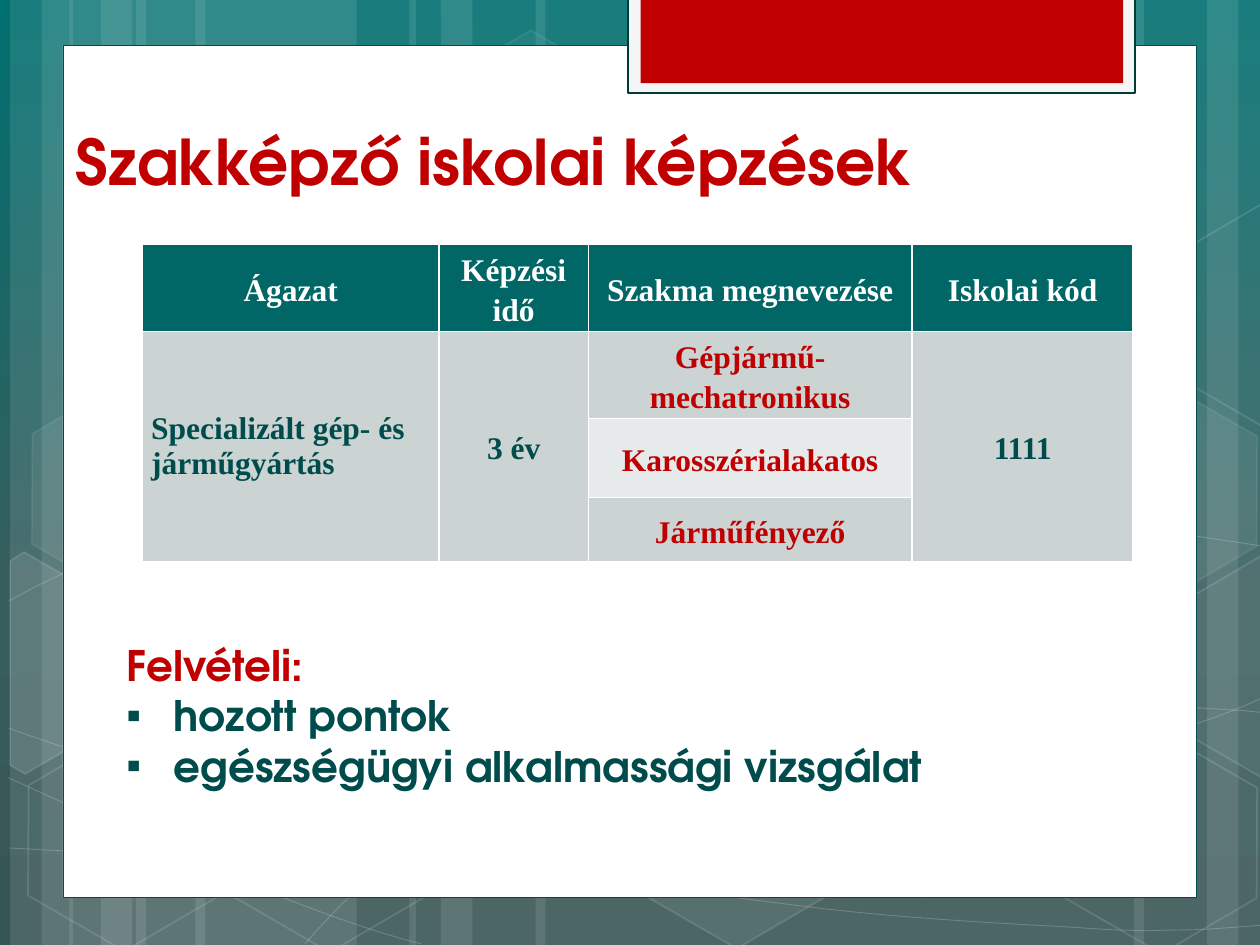
from copy import deepcopy
from math import cos, radians, sin
from typing import NamedTuple, Optional

from lxml.etree import SubElement
from pptx import Presentation
from pptx.dml.color import RGBColor
from pptx.enum.shapes import MSO_SHAPE as Preset
from pptx.enum.text import MSO_ANCHOR as Anchor, MSO_AUTO_SIZE as AutoSize, PP_ALIGN as Align
from pptx.oxml.ns import qn
from pptx.util import Emu, Inches, Pt

WHITE = RGBColor(0xFF, 0xFF, 0xFF)
RED = RGBColor(0xC0, 0x00, 0x00)
DARK_TEAL = RGBColor(0x00, 0x4C, 0x4C)
FRAME_TEAL = RGBColor(0x00, 0x3B, 0x3C)
HEADER_TEAL = RGBColor(0x00, 0x66, 0x66)
PALE_GREY = RGBColor(0xF5, 0xF5, 0xF5)
CELL_GREY = RGBColor(0xCC, 0xD3, 0xD3)
LIGHT_GREY = RGBColor(0xE7, 0xEA, 0xEA)
BACKDROP = [(0, RGBColor(0x00, 0x6F, 0x6F)), (0.62, RGBColor(0x37, 0x5D, 0x5D)),
            (1, RGBColor(0x38, 0x55, 0x55))]
HEADING_FONT, TABLE_FONT = "TeX Gyre Adventor", "Times New Roman"
TILT = 30

# The slide is a grid of 100 columns by 75 square rows
deck = Presentation()
deck.slide_width, deck.slide_height = Inches(10), Inches(7.5)
UNIT = deck.slide_width / 100


def units(count: float) -> Emu:
    return Emu(round(count * UNIT))


class Area(NamedTuple):
    left: float
    top: float
    width: float
    height: float

    def lengths(self) -> list[Emu]:
        return [units(value) for value in self]


class Paint(NamedTuple):
    fill: Optional[RGBColor] = None
    fill_alpha: int = 100
    line: Optional[RGBColor] = None
    line_width: float = 1
    line_alpha: int = 100


class Hexagon(NamedTuple):
    left: float
    top: float
    fill_alpha: int
    line_alpha: int


class CutHexagon(NamedTuple):
    center: tuple
    corners: list
    fill_alpha: int


class Entry(NamedTuple):
    text: str
    fill: RGBColor
    color: RGBColor
    centred: bool = True


STRIPES = [(10.8, 17.5), (0.8, 5), (3.3, 8.3), (15.5, 17.5), (5.5, 5), (8, 8.3), (73.3, 17.5),
           (95.8, 5), (90, 8.3), (42.5, 30.8), (32.5, 5), (35, 8.3)]

# Each curve: its start, then segments of three Bézier points or one line point
CURVES = [
    [[(0.7, 67.3)], [(6.1, 67.6), (11.5, 67.9), (19, 67.8)], [(26.5, 67.7), (35.8, 67.5), (45.8, 66.5)],
     [(55.8, 65.5), (70, 63.6), (79.2, 61.7)], [(88.3, 59.8), (97.7, 56.8), (100.7, 55.1)]],
    [[(0.7, 47.7)], [(3.6, 46.1), (6.5, 44.6), (12.1, 43.1)], [(17.8, 41.6), (25.9, 39.4), (34.7, 38.7)],
     [(43.6, 38), (54.4, 37.9), (65.4, 38.7)], [(76.4, 39.5), (94.7, 42.6), (100.7, 43.4)]],
    [[(0.6, 61.7)], [(12.7, 67.2), (24.7, 72.7), (33.4, 74.9)]],
    [[(0.7, 57.8)], [(3.8, 58.9), (7, 60), (12.8, 61.6)], [(18.6, 63.1), (27.3, 65.6), (35.7, 67.3)],
     [(44, 69), (54.5, 70.8), (62.8, 71.8)], [(71.1, 72.9), (80, 73.3), (85.3, 73.6)],
     [(90.5, 74), (91.9, 73.8), (94.5, 73.8)], [(97.1, 73.7), (98.9, 73.5), (100.7, 73.4)]],
    [[(24.2, 74.9)], [(26, 72.9), (27.8, 70.9), (30.2, 69.1)], [(32.6, 67.3), (36, 65.3), (38.8, 63.9)],
     [(41.6, 62.5), (43.3, 61.9), (47, 60.9)], [(50.6, 59.9), (57.3, 58.5), (60.8, 57.8)],
     [(64.4, 57.1), (64.9, 57.1), (68, 56.9)], [(71.1, 56.6), (76, 56.3), (79.4, 56.2)],
     [(82.9, 56.1), (88.6, 56.2), (88.6, 56.2)], [(95.3, 56.2)],
     [(97.1, 56.3), (98.8, 56.4), (99.7, 56.5)], [(100.6, 56.6), (100.3, 56.5), (100.6, 56.6)]],
]
HEXAGONS = [Hexagon(33.4, 3.6, 4, 8), Hexagon(49.7, 58.9, 6, 12), Hexagon(1.1, 59.1, 0, 12),
            Hexagon(1.4, 31.2, 7, 8), Hexagon(17.4, 59.2, 0, 12), Hexagon(75.3, 45.3, 10, 12),
            Hexagon(83.4, 59.3, 0, 12), Hexagon(83.4, 31.4, 7, 8)]

# Hexagons cut by the slide's edge; the right-hand pair shares one outline
LEFT_CUT = [(0.8, 44.5), (1.9, 43.8), (9.6, 48.2), (9.5, 57), (2, 61.4), (0.8, 60.7)]
RIGHT_CUT = [(92.6, 48.5), (100.1, 44.1), (100.9, 44.6), (100.9, 61.3), (100.2, 61.7), (92.6, 57.3)]
UPPER_CUT = [(x, y - 27.9) for x, y in RIGHT_CUT]
CUT_HEXAGONS = [CutHexagon((3.6, 53.5), LEFT_CUT, 10), CutHexagon((98.5, 52), RIGHT_CUT, 4),
                CutHexagon((98.5, 24.1), UPPER_CUT, 0)]

COLUMN_WIDTHS = [23.55, 11.85, 25.7, 17.55]
ROW_HEIGHTS = [6.3, 6.5, 6.3, 5.1]
HEADINGS = ["Ágazat", "Képzési idő", "Szakma megnevezése", "Iskolai kód"]
ENTRIES = {(0, column): Entry(text, HEADER_TEAL, WHITE) for column, text in enumerate(HEADINGS)} | {
    (1, 0): Entry("Specializált gép- és járműgyártás", CELL_GREY, DARK_TEAL, centred=False),
    (1, 1): Entry("3 év", CELL_GREY, DARK_TEAL),
    (1, 2): Entry("Gépjármű-mechatronikus", CELL_GREY, RED),
    (1, 3): Entry("1111", CELL_GREY, DARK_TEAL),
    (2, 2): Entry("Karosszérialakatos", LIGHT_GREY, RED),
    (3, 2): Entry("Járműfényező", CELL_GREY, RED),
}


def apply_paint(shape, paint: Paint) -> None:
    shape.shadow.inherit = False
    properties = shape.element.spPr
    for target, color, alpha, tag in (
            (shape.fill, paint.fill, paint.fill_alpha, "a:solidFill"),
            (shape.line.fill, paint.line, paint.line_alpha, "a:ln")):
        if color is None or alpha == 0:
            target.background()
            continue
        target.solid()
        target.fore_color.rgb = color
        if alpha < 100:
            tint = next(properties.find(qn(tag)).iter(qn("a:srgbClr")))
            SubElement(tint, qn("a:alpha"), val=str(alpha * 1000))
    if paint.line is not None:
        shape.line.width = Pt(paint.line_width)


def draw_preset(slide, preset: Preset, area: Area, paint: Paint):
    shape = slide.shapes.add_shape(preset, *area.lengths())
    apply_paint(shape, paint)
    return shape


def draw_outline(slide, points: list, paint: Paint, close: bool):
    corners = [(units(x), units(y)) for x, y in points]
    builder = slide.shapes.build_freeform(*corners[0])
    builder.add_line_segments(corners[1:], close=close)
    shape = builder.convert_to_shape()
    apply_paint(shape, paint)
    return shape


def draw_curve(slide, segments: list, paint: Paint) -> None:
    shape = draw_outline(slide, [point for segment in segments for point in segment], paint, close=False)
    # Gather each three line steps of a Bézier segment into one curve step
    steps = iter(list(shape.element.iter(qn("a:lnTo"))))
    for segment in segments[1:]:
        first, *others = [next(steps) for _ in segment]
        if others:
            first.tag = qn("a:cubicBezTo")
            for step in others:
                first.append(step[0])
                step.getparent().remove(step)


def draw_cut_hexagon(slide, item: CutHexagon) -> None:
    cosine, sine = cos(radians(TILT)), sin(radians(TILT))
    middle_x, middle_y = item.center
    offsets = [(x - middle_x, y - middle_y) for x, y in item.corners]
    upright = [(middle_x + cosine * x + sine * y, middle_y - sine * x + cosine * y) for x, y in offsets]
    shape = draw_outline(slide, upright, Paint(WHITE, item.fill_alpha, WHITE, 1, 12), close=True)
    shape.rotation = TILT


def add_span(para, text: str, size: float, font: str, color: RGBColor) -> None:
    span = para.add_run()
    span.text = text
    span.font.size, span.font.name, span.font.bold = Pt(size), font, True
    span.font.color.rgb = color


def add_text_box(slide, area: Area, anchor: Anchor):
    frame = slide.shapes.add_textbox(*area.lengths()).text_frame
    frame.word_wrap, frame.vertical_anchor = True, anchor
    return frame


def add_bullet(para) -> None:
    properties = para._p.get_or_add_pPr()
    properties.set("marL", str(units(3.75)))
    properties.set("indent", str(-units(3.75)))
    SubElement(properties, qn("a:buFont"), typeface=TABLE_FONT)
    SubElement(properties, qn("a:buChar"), char="▪")


def draw_table(slide) -> None:
    # The default table style rules the cells in white, thicker below the header
    area = Area(11.3, 19.4, sum(COLUMN_WIDTHS), sum(ROW_HEIGHTS))
    table = slide.shapes.add_table(len(ROW_HEIGHTS), len(COLUMN_WIDTHS), *area.lengths()).table
    for column, width in zip(table.columns, COLUMN_WIDTHS):
        column.width = units(width)
    for row, height in zip(table.rows, ROW_HEIGHTS):
        row.height = units(height)
    for column in (0, 1, 3):
        table.cell(1, column).merge(table.cell(3, column))
    for (row, column), entry in ENTRIES.items():
        cell = table.cell(row, column)
        cell.fill.solid()
        cell.fill.fore_color.rgb = entry.fill
        cell.vertical_anchor = Anchor.MIDDLE
        cell.margin_left = cell.margin_right = units(0.7)
        cell.margin_top = cell.margin_bottom = 0
        para = cell.text_frame.paragraphs[0]
        if entry.centred:
            para.alignment, para.line_spacing = Align.CENTER, 1.15
        add_span(para, entry.text, 18, TABLE_FONT, entry.color)


def build_page() -> None:
    page = deck.slides.add_slide(deck.slide_layouts[6])

    # Gradient backdrop, top to bottom
    backdrop = page.background.fill
    backdrop.gradient()
    stop_list = next(page.element.iter(qn("a:gsLst")))
    stop_list.append(deepcopy(stop_list[-1]))
    for stop, (position, color) in zip(backdrop.gradient_stops, BACKDROP):
        stop.position, stop.color.rgb = position, color
    backdrop.gradient_angle = 270

    # Translucent stripes, curves and hexagons
    for left, width in STRIPES:
        draw_preset(page, Preset.RECTANGLE, Area(left, 0, width, 75), Paint(WHITE, 10))
    for curve in CURVES:
        draw_curve(page, curve, Paint(line=WHITE, line_width=0.5, line_alpha=20))
    for item in HEXAGONS:
        hexagon = draw_preset(page, Preset.HEXAGON, Area(item.left, item.top, 17.5, 15.2),
                              Paint(WHITE, item.fill_alpha, WHITE, 1, item.line_alpha))
        hexagon.rotation = TILT
        hexagon.adjustments[0] = 0.285
    for item in CUT_HEXAGONS:
        draw_cut_hexagon(page, item)

    # White panel and red tab
    draw_preset(page, Preset.RECTANGLE, Area(5, 3.6, 90, 67.65), Paint(WHITE, line=DARK_TEAL, line_width=0.5))
    draw_preset(page, Preset.RECTANGLE, Area(49.87, -0.2, 40.2, 7.6),
                Paint(PALE_GREY, line=FRAME_TEAL, line_width=1.25))
    draw_preset(page, Preset.RECTANGLE, Area(50.85, -0.2, 38.3, 6.8), Paint(RED))

    # Title, table and admission notes
    title = add_text_box(page, Area(5, 3, 90, 13.2), Anchor.BOTTOM)
    add_span(title.paragraphs[0], "Szakképző iskolai képzések", 36, HEADING_FONT, RED)
    draw_table(page)
    notes = add_text_box(page, Area(9.05, 50.25, 83.2, 13.1), Anchor.TOP)
    notes.auto_size = AutoSize.SHAPE_TO_FIT_TEXT
    add_span(notes.paragraphs[0], "Felvételi:", 24, HEADING_FONT, RED)
    for text in ("hozott pontok", "egészségügyi alkalmassági vizsgálat"):
        para = notes.add_paragraph()
        add_bullet(para)
        add_span(para, text, 24, HEADING_FONT, DARK_TEAL)


if __name__ == "__main__":
    build_page()
    deck.save("out.pptx")
